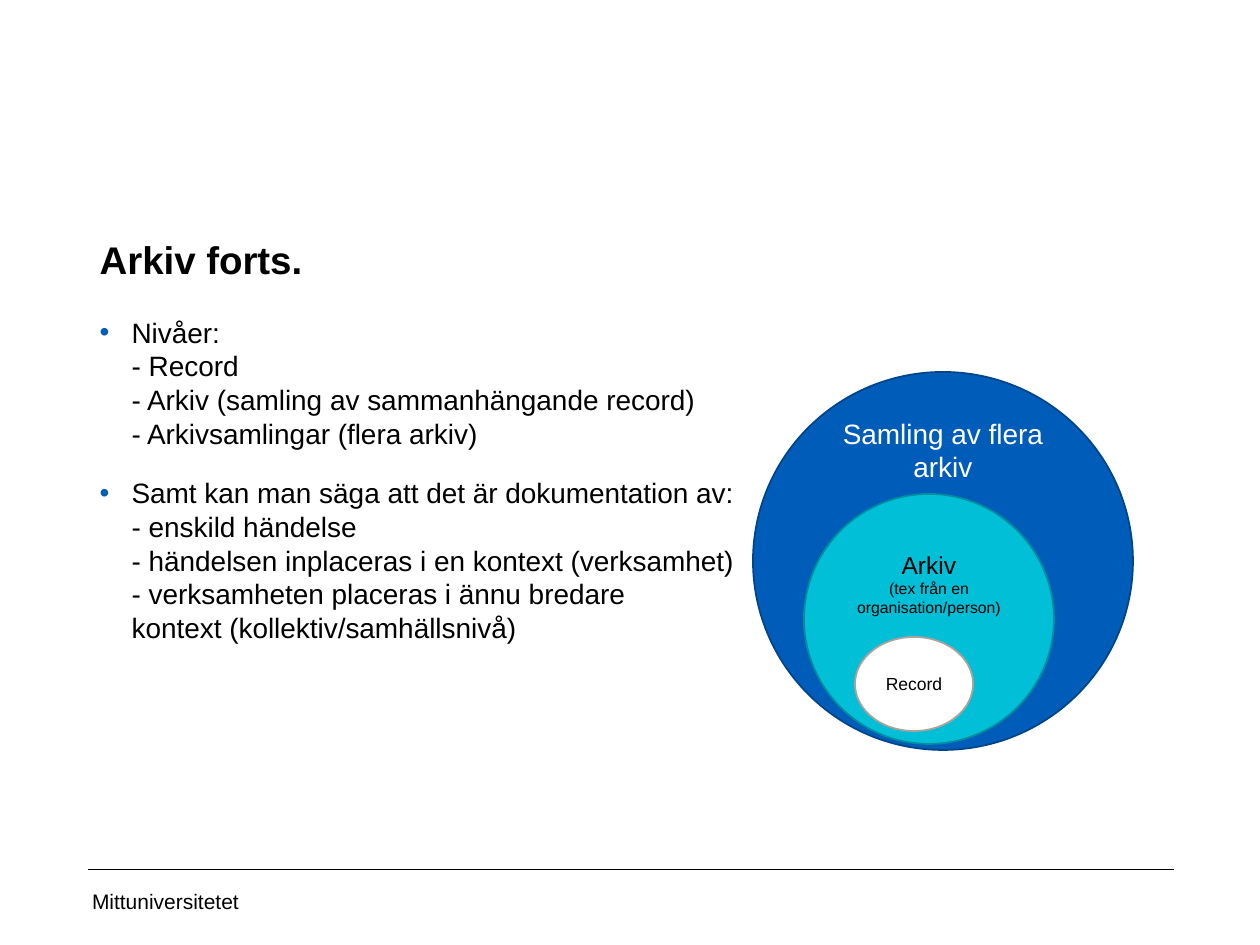
from dataclasses import dataclass

from lxml import etree
from pptx import Presentation
from pptx.dml.color import RGBColor
from pptx.enum.shapes import MSO_CONNECTOR, MSO_SHAPE
from pptx.enum.text import MSO_ANCHOR, MSO_AUTO_SIZE, PP_ALIGN
from pptx.oxml.ns import qn
from pptx.util import Emu, Pt

ELLIPSE, STRAIGHT = MSO_SHAPE.OVAL, MSO_CONNECTOR.STRAIGHT
TOP, MIDDLE = MSO_ANCHOR.TOP, MSO_ANCHOR.MIDDLE
LEFT, CENTER = PP_ALIGN.LEFT, PP_ALIGN.CENTER
PX_PER_INCH = 126
FONT, BLACK, WHITE, BLUE = "Arial", "000000", "FFFFFF", "005CB9"


@dataclass
class Level:
    """One circle in the nested archive levels; label holds (text, size) lines."""
    box: tuple[int, int, int, int]
    fill: str
    outline: str
    label: list[tuple[str, int]]
    text_color: str = BLACK
    anchor: MSO_ANCHOR = TOP
    inset_top: int = 6


LEVELS = [
    Level((753, 372, 380, 378), BLUE, "004489",
          [("Samling av flera arkiv", 16)], WHITE, inset_top=-11),
    Level((804, 494, 250, 250), "00BFD6", "008D9E",
          [("Arkiv", 14), ("(tex från en organisation/person)", 9)], inset_top=19),
    Level((855, 637, 118, 94), WHITE, "AEA299", [("Record", 10)], anchor=MIDDLE),
]

BULLETS = [
    ["Nivåer:", "- Record", "- Arkiv (samling av sammanhängande record)",
     "- Arkivsamlingar (flera arkiv)"],
    ["Samt kan man säga att det är dokumentation av:", "- enskild händelse",
     "- händelsen inplaceras i en kontext (verksamhet)",
     "- verksamheten placeras i ännu bredare", "kontext (kollektiv/samhällsnivå)"],
]


def px(length: int) -> Emu:
    return Emu(round(length * 914400 / PX_PER_INCH))


def rgb(color: str) -> RGBColor:
    return RGBColor.from_string(color)


def apply(target, values: dict) -> None:
    for name, value in values.items():
        setattr(target, name, value)


def place(shape, box: tuple[int, int, int, int]) -> None:
    apply(shape, dict(zip(("left", "top", "width", "height"), map(px, box))))


def set_font(font, size: int, color: str = BLACK, bold: bool = False) -> None:
    apply(font, {"name": FONT, "size": Pt(size), "bold": bold})
    font.color.rgb = rgb(color)


def set_frame(frame, anchor: MSO_ANCHOR, **insets: Emu) -> None:
    apply(frame, {"word_wrap": True, "auto_size": MSO_AUTO_SIZE.NONE,
                  "vertical_anchor": anchor, **insets})


def add_bullet(paragraph) -> None:
    properties = paragraph._p.get_or_add_pPr()
    properties.set("marL", str(px(32)))
    properties.set("indent", str(-px(32)))
    bullet_color = etree.SubElement(properties, qn("a:buClr"))
    etree.SubElement(bullet_color, qn("a:srgbClr")).set("val", BLUE)
    etree.SubElement(properties, qn("a:buFont")).set("typeface", FONT)
    etree.SubElement(properties, qn("a:buChar")).set("char", "•")


def add_level(slide, level: Level) -> None:
    circle = slide.shapes.add_shape(ELLIPSE, *map(px, level.box))
    circle.shadow.inherit = False
    circle.fill.solid()
    circle.fill.fore_color.rgb = rgb(level.fill)
    circle.line.color.rgb = rgb(level.outline)
    circle.line.width = Pt(1)
    set_frame(circle.text_frame, level.anchor, margin_top=px(level.inset_top))
    paragraph = circle.text_frame.paragraphs[0]
    paragraph.alignment = CENTER
    for index, (text, size) in enumerate(level.label):
        if index:
            paragraph.add_line_break()
        run = paragraph.add_run()
        run.text = text
        set_font(run.font, size, level.text_color)


def add_footer(slide) -> None:
    university = slide.shapes.add_textbox(*map(px, (87, 876, 284, 50)))
    set_frame(university.text_frame, MIDDLE, margin_left=px(5))
    paragraph = university.text_frame.paragraphs[0]
    paragraph.text = "Mittuniversitetet"
    set_font(paragraph.font, 12)

    rule = slide.shapes.add_connector(STRAIGHT, *map(px, (88, 869, 1174, 869)))
    rule.line.color.rgb = rgb(BLACK)
    rule.line.width = Pt(0.25)
    etree.SubElement(rule._element.spPr, qn("a:effectLst"))


def main() -> None:
    presentation = Presentation()
    presentation.slide_width, presentation.slide_height = px(1260), px(945)
    slide = presentation.slides.add_slide(presentation.slide_layouts[1])
    add_footer(slide)

    # Title
    title = slide.shapes.title
    place(title, (87, 213, 1090, 89))
    set_frame(title.text_frame, TOP)
    heading = title.text_frame.paragraphs[0]
    heading.text = "Arkiv forts."
    apply(heading, {"alignment": LEFT, "line_spacing": Pt(36)})
    set_font(heading.font, 22, bold=True)

    # Bulleted list
    body = slide.placeholders[1]
    place(body, (87, 309, 1090, 529))
    set_frame(body.text_frame, TOP)
    for index, lines in enumerate(BULLETS):
        frame = body.text_frame
        paragraph = frame.add_paragraph() if index else frame.paragraphs[0]
        paragraph.text = "\v".join(lines)
        paragraph.space_before = Pt(15 if index else 0)
        add_bullet(paragraph)
        set_font(paragraph.font, 16)

    # Nested circles, outermost first
    for level in LEVELS:
        add_level(slide, level)

    presentation.save("out.pptx")


if __name__ == "__main__":
    main()
